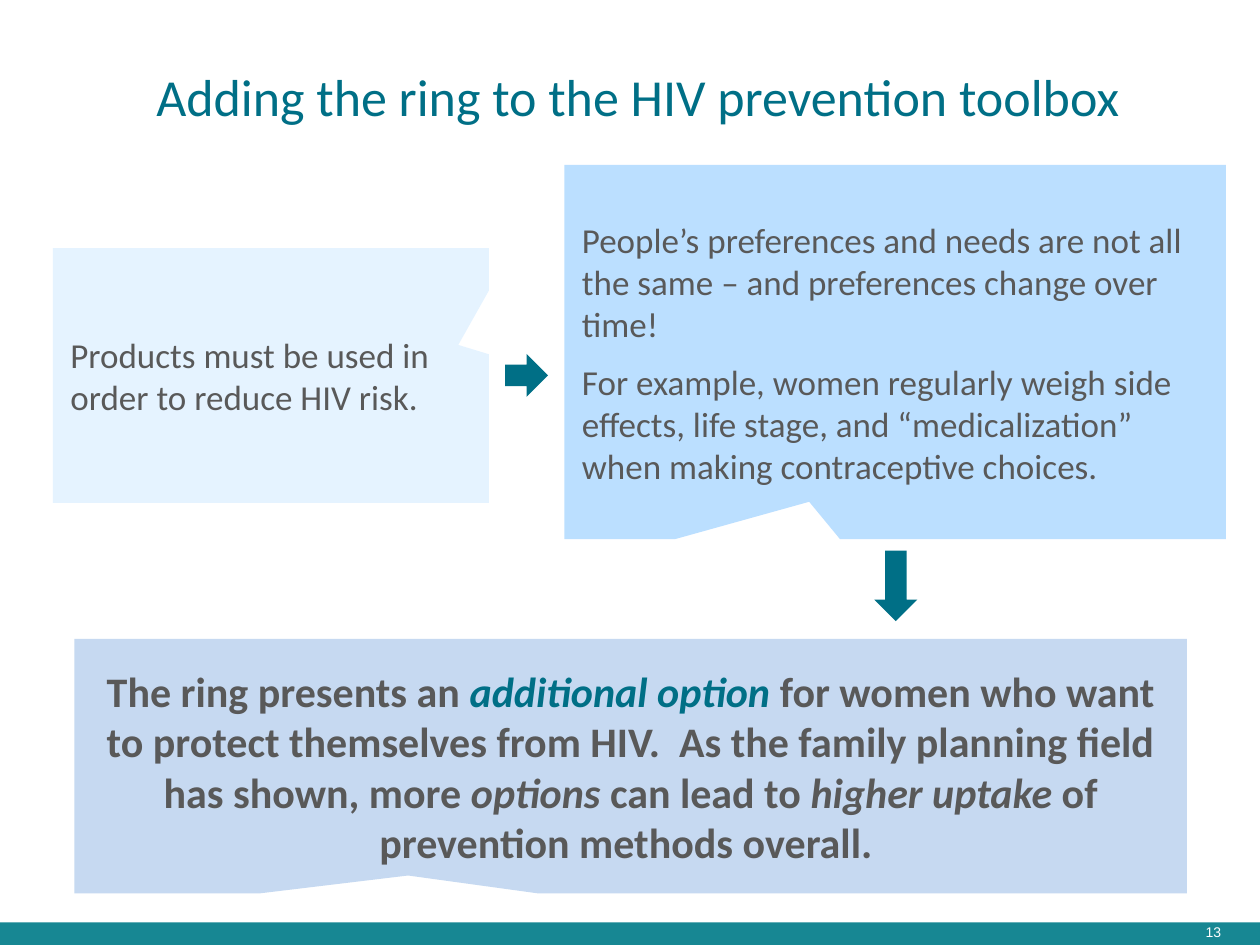
from pptx import Presentation
from pptx.dml.color import RGBColor
from pptx.enum.shapes import MSO_SHAPE as Shape
from pptx.enum.text import MSO_ANCHOR as Anchor, PP_ALIGN as Align
from pptx.util import Inches, Pt

COLORS = {
    "teal": "006F86",
    "footer": "178793",
    "text": "595959",
    "pale": "E5F3FF",
    "sky": "BBDFFF",
    "periwinkle": "C6D9F1",
    "white": "FFFFFF",
}
FONT = "Calibri"

NEED = ["Products must be used in order to reduce HIV risk."]
PREFERENCES = [
    "People’s preferences and needs are not all the same – and preferences change over time!",
    "For example, women regularly weigh side effects, life stage, and “medicalization” "
    "when making contraceptive choices.",
]
CONCLUSION = [
    ("The ring presents an ", "text", False),
    ("additional option ", "teal", True),
    ("for women who want to protect themselves from HIV.  As the family planning field "
     "has shown, more ", "text", False),
    ("options", "text", True),
    (" can lead to ", "text", False),
    ("higher uptake ", "text", True),
    ("of prevention methods overall. ", "text", False),
]


def color(name):
    return RGBColor.from_string(COLORS[name])


def style(font, size, color_name, name=FONT, bold=False, italic=False):
    font.name, font.size = name, Pt(size)
    font.bold, font.italic = bold, italic
    font.color.rgb = color(color_name)


def place(shape, box):
    shape.left, shape.top, shape.width, shape.height = map(Inches, box)


def add_filled(page, kind, box, fill):
    shape = page.shapes.add_shape(kind, *map(Inches, box))
    shape.shadow.inherit = False
    shape.fill.solid()
    shape.fill.fore_color.rgb = color(fill)
    shape.line.fill.background()
    return shape


def add_callout(page, box, fill, tip):
    callout = add_filled(page, Shape.RECTANGULAR_CALLOUT, box, fill)
    callout.adjustments[0], callout.adjustments[1] = tip
    callout.text_frame.word_wrap = True
    callout.text_frame.vertical_anchor = Anchor.MIDDLE
    return callout.text_frame


def add_statement(page, box, fill, tip, lines):
    frame = add_callout(page, box, fill, tip)
    frame.text = "\n".join(lines)
    for index, para in enumerate(frame.paragraphs):
        para.alignment = Align.LEFT
        para._p.get_or_add_pPr().set("marL", str(Inches(0.04)))
        para.space_before = Pt(9 if index else 0)
        for span in para.runs:
            style(span.font, 20, "text")


def add_conclusion(page, box, fill, tip, parts):
    para = add_callout(page, box, fill, tip).paragraphs[0]
    para.alignment = Align.CENTER
    para.space_after = Pt(4.5)
    for text, color_name, italic in parts:
        span = para.add_run()
        span.text = text
        style(span.font, 24, color_name, bold=True, italic=italic)


def add_arrow(page, box, rotation=0):
    arrow = add_filled(page, Shape.RIGHT_ARROW, box, "teal")
    arrow.rotation = rotation


def set_title(page, box, text):
    title = page.shapes.title
    place(title, box)
    frame = title.text_frame
    frame.text = text
    frame.word_wrap = True
    frame.vertical_anchor = Anchor.MIDDLE
    frame.margin_left = frame.margin_right = Inches(0.07)
    frame.margin_top = frame.margin_bottom = Inches(0.04)
    para = frame.paragraphs[0]
    para.alignment = Align.LEFT
    style(para.runs[0].font, 29.7, "teal")


def add_footer(page, box, number):
    left, top, width, height = box
    add_filled(page, Shape.RECTANGLE, box, "footer")
    label = page.shapes.add_textbox(
        Inches(left + width - 1.19), Inches(top - 0.04), Inches(0.98), Inches(0.24))
    frame = label.text_frame
    frame.word_wrap = True
    frame.text = number
    para = frame.paragraphs[0]
    para.alignment = Align.RIGHT
    style(para.runs[0].font, 8, "white", name="Arial")


def main():
    deck = Presentation()
    deck.slide_width, deck.slide_height = Inches(10), Inches(7.5)
    page = deck.slides.add_slide(deck.slide_layouts[5])
    add_footer(page, (0, 7.32, 10, 0.18), "13")
    set_title(page, (1.17, 0.22, 8.83, 1.08), "Adding the ring to the HIV prevention toolbox")
    add_statement(page, (4.48, 1.31, 5.25, 2.97), "sky", (-0.13, 0.4), PREFERENCES)
    add_statement(page, (0.42, 1.97, 3.46, 2.02), "pale", (0.43, -0.12), NEED)
    add_conclusion(page, (0.59, 5.07, 8.83, 2.02), "periwinkle", (-0.2, 0.43), CONCLUSION)
    add_arrow(page, (4.01, 2.81, 0.34, 0.34))
    add_arrow(page, (6.83, 4.48, 0.56, 0.34), rotation=90)
    deck.save("out.pptx")


if __name__ == "__main__":
    main()
